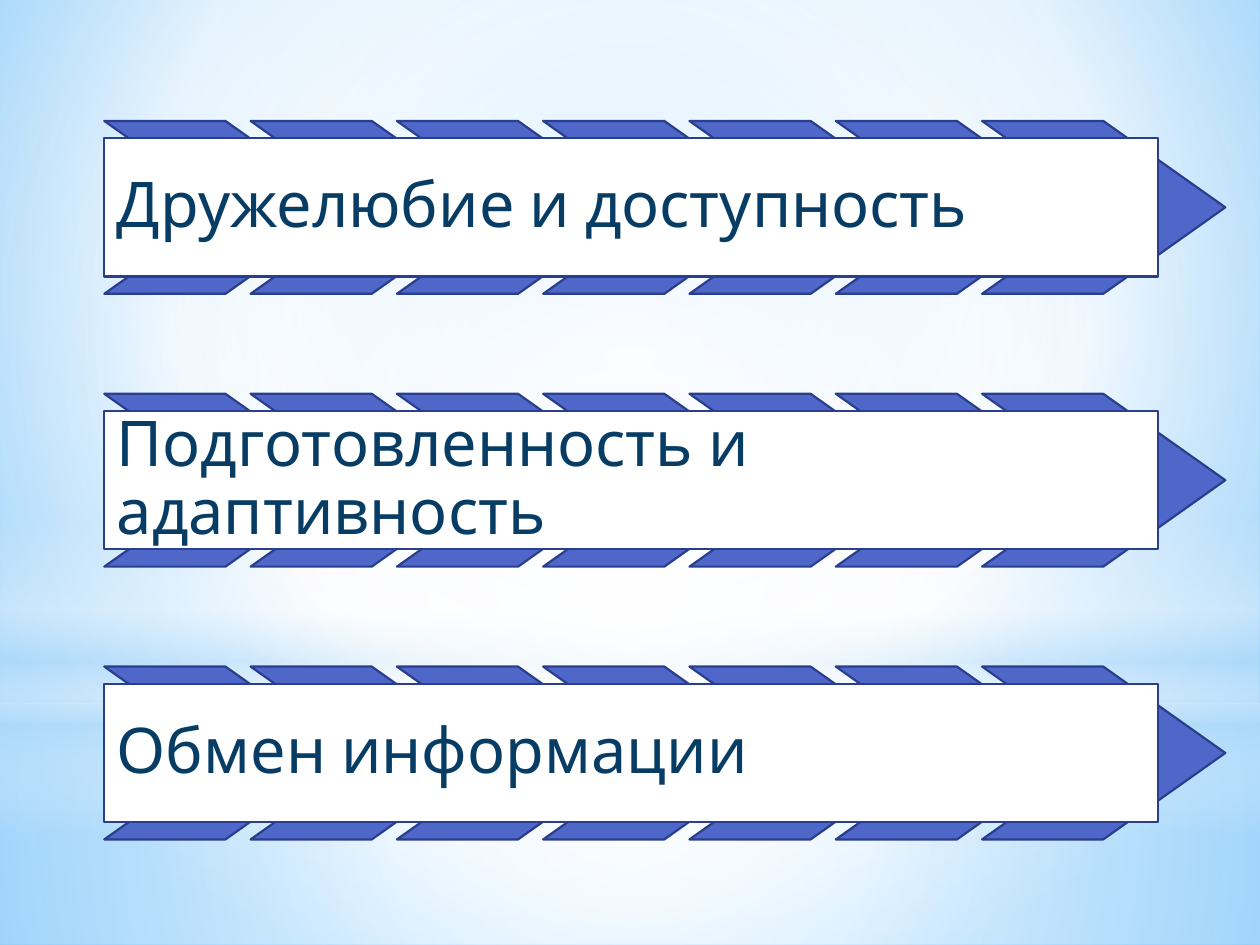
"""Build a slide with three chevron bands, each carrying a label."""
from dataclasses import dataclass

from pptx import Presentation
from pptx.dml.color import RGBColor
from pptx.enum.shapes import MSO_SHAPE as Shape
from pptx.enum.text import MSO_ANCHOR as Anchor, PP_ALIGN as Align
from pptx.oxml.ns import qn
from pptx.oxml.xmlchemy import OxmlElement
from pptx.util import Pt


@dataclass(frozen=True)
class Theme:
    chevron: str = "4E67C8"
    outline: str = "2A3E8E"
    text: str = "073C65"
    white: str = "FFFFFF"
    pale: str = "B4DCFA"
    sky: str = "9ED5FF"
    deep_sky: str = "5BB9FF"
    font: str = "Karla"
    label_size: float = 36
    line_width: float = 1.25


theme = Theme()


def paint_gradient(fill, element, stops, focus=None):
    fill.gradient()
    gradient = next(element.iter(qn("a:gradFill")))
    gradient.clear()
    gradient.set("rotWithShape", "1")
    stop_list = OxmlElement("a:gsLst")
    gradient.append(stop_list)
    for position, color, opacity in stops:
        stop = OxmlElement("a:gs")
        stop.set("pos", str(position * 1000))
        stop_color = OxmlElement("a:srgbClr")
        stop_color.set("val", color)
        if opacity < 100:
            alpha = OxmlElement("a:alpha")
            alpha.set("val", str(opacity * 1000))
            stop_color.append(alpha)
        stop.append(stop_color)
        stop_list.append(stop)
    if focus:
        direction = OxmlElement("a:path")
        direction.set("path", "circle")
        target = OxmlElement("a:fillToRect")
        for side, percent in zip("ltrb", focus):
            target.set(side, str(percent * 1000))
        direction.append(target)
    else:
        direction = OxmlElement("a:lin")
        direction.set("ang", "5400000")
        direction.set("scaled", "0")
    gradient.append(direction)


def add_filled(shapes, kind, box, color):
    shape = shapes.add_shape(kind, *map(Pt, box))
    shape.shadow.inherit = False
    shape.fill.solid()
    shape.fill.fore_color.rgb = RGBColor.from_string(color)
    shape.line.color.rgb = RGBColor.from_string(theme.outline)
    shape.line.width = Pt(theme.line_width)
    return shape


presentation = Presentation()
presentation.slide_width, presentation.slide_height = Pt(720), Pt(540)
slide = presentation.slides.add_slide(presentation.slide_layouts[6])

paint_gradient(
    slide.background.fill, slide.element,
    [(0, theme.sky, 100), (60, theme.white, 100), (100, theme.deep_sky, 100)],
    (20, 10, 20, 60),
)

center = (50, 50, 50, 50)
glows = [
    (Shape.RECTANGLE, (0, 401.8, 720, 138.2), center,
     [(0, theme.white, 91), (37, theme.white, 76), (100, theme.pale, 79)]),
    (Shape.RECTANGLE, (0, 0, 720, 401.8), center,
     [(0, theme.white, 89), (48, theme.white, 62), (100, theme.pale, 79)]),
    (Shape.RECTANGLE, (0, 296.6, 720, 180), None,
     [(0, theme.white, 0), (29, theme.white, 30), (45, theme.pale, 40),
      (55, theme.white, 26), (65, theme.pale, 60), (100, theme.white, 0)]),
    (Shape.OVAL, (0, 126, 720, 401.8), center,
     [(0, theme.white, 100), (56, theme.white, 0)]),
]
for kind, box, focus, stops in glows:
    glow = slide.shapes.add_shape(kind, *map(Pt, box))
    glow.shadow.inherit = False
    glow.line.fill.background()
    paint_gradient(glow.fill, glow.element, stops, focus)

labels = ["Дружелюбие и доступность", "Подготовленность и адаптивность", "Обмен информации"]
left, first_top, row_pitch = 59.6, 69.1, 155.9
chevron_count, chevron_pitch = 7, 83.6
chevron_width, chevron_height = 139, 98.8
label_width, label_height = 602, 79
label_offset = (chevron_height - label_height) / 2

for row, label in enumerate(labels):
    top = first_top + row * row_pitch
    band = slide.shapes.add_group_shape()
    for column in range(chevron_count):
        box = (left + column * chevron_pitch, top, chevron_width, chevron_height)
        chevron = add_filled(band.shapes, Shape.CHEVRON, box, theme.chevron)
        chevron.adjustments[0] = 0.706

    box = (left, top + label_offset, label_width, label_height)
    panel = add_filled(band.shapes, Shape.RECTANGLE, box, theme.white)
    frame = panel.text_frame
    frame.word_wrap = True
    frame.vertical_anchor = Anchor.MIDDLE
    frame.margin_left = frame.margin_right = Pt(7.2)
    frame.margin_top = frame.margin_bottom = Pt(7.2)
    paragraph = frame.paragraphs[0]
    paragraph.alignment = Align.LEFT
    paragraph.line_spacing = 0.9
    run = paragraph.add_run()
    run.text = label
    run.font.name = theme.font
    run.font.size = Pt(theme.label_size)
    run.font.color.rgb = RGBColor.from_string(theme.text)

presentation.save("out.pptx")
